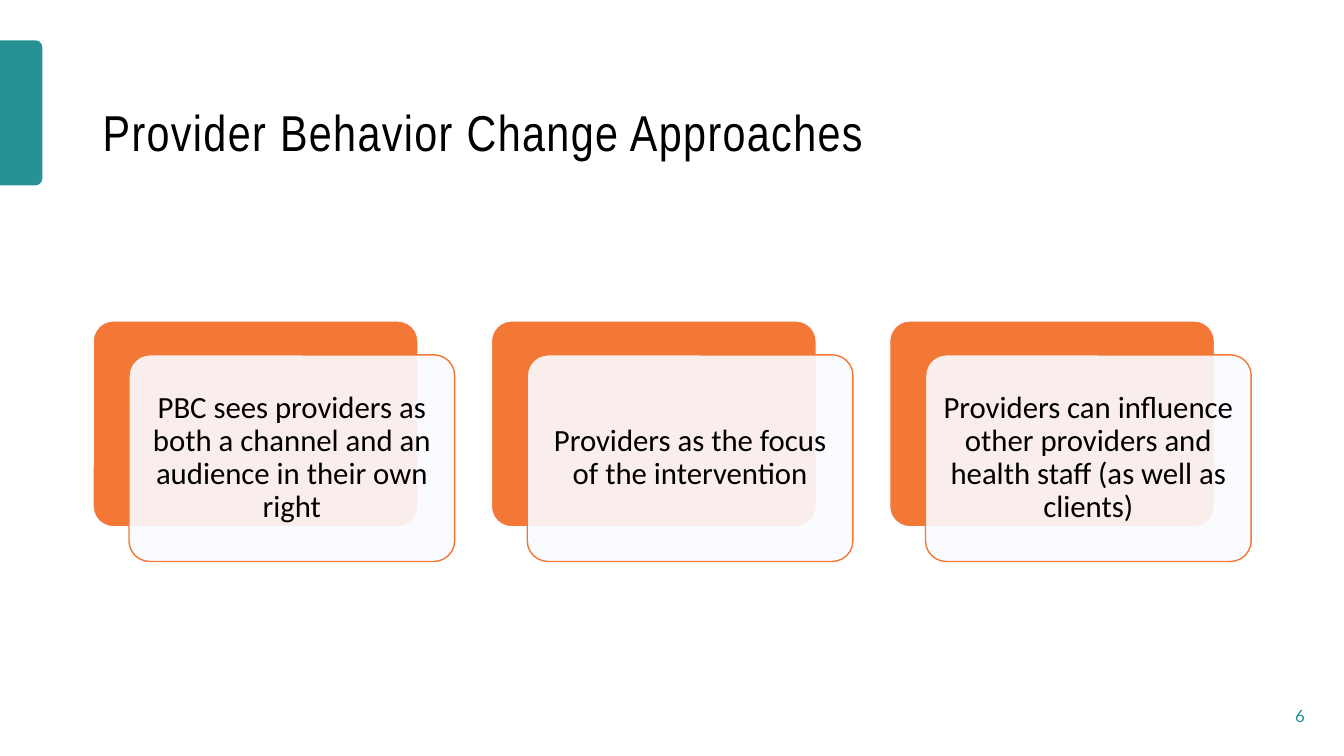
from lxml import etree
from pptx import Presentation
from pptx.dml.color import RGBColor
from pptx.enum.shapes import MSO_SHAPE
from pptx.enum.text import MSO_ANCHOR, PP_ALIGN
from pptx.oxml.ns import qn
from pptx.util import Inches, Pt

TITLE = "Provider Behavior Change Approaches"
PAGE_NUMBER = "6"
APPROACHES = [
    "PBC sees providers as both a channel and an audience in their own right",
    "Providers as the focus of the intervention",
    "Providers can influence other providers and health staff (as well as clients)",
]

COLOURS = {"teal": "289195", "orange": "F37836", "pale": "FAFBFF", "black": "000000"}

TITLE_FORMAT = {
    "font": {"name": "Arial Narrow", "size": Pt(36)},
    "paragraph": {"line_spacing": 0.9},
}
NUMBER_FORMAT = {
    "font": {"name": "Lato", "size": Pt(12)},
    "paragraph": {"alignment": PP_ALIGN.RIGHT, "space_after": Pt(6)},
}
CARD_FORMAT = {
    "font": {"name": "Calibri", "size": Pt(22)},
    "paragraph": {"alignment": PP_ALIGN.CENTER, "line_spacing": 0.9},
    "frame": {f"margin_{side}": Inches(0.09) for side in ("left", "top", "right", "bottom")},
}

CARD_LEFT, CARD_TOP = 0.92, 3.18
CARD_WIDTH, CARD_HEIGHT = 3.23, 2.05
CARD_PITCH = 3.95
FRONT_SHIFT_X, FRONT_SHIFT_Y = 0.36, 0.34
CARD_ROUNDING = 0.1


def colour(name):
    return RGBColor.from_string(COLOURS[name])


def set_all(target, values):
    for attribute, value in values.items():
        setattr(target, attribute, value)


def write(shape, text, ink, formats):
    """Put one formatted, vertically centred paragraph in a shape; return its run."""
    frame = shape.text_frame
    set_all(frame, {"word_wrap": True, "vertical_anchor": MSO_ANCHOR.MIDDLE})
    set_all(frame, formats.get("frame", {}))
    paragraph = frame.paragraphs[0]
    set_all(paragraph, formats["paragraph"])
    run = paragraph.add_run()
    run.text = text
    set_all(run.font, formats["font"])
    run.font.color.rgb = colour(ink)
    return run


def add_block(slide, kind, box, fill, line=None, line_width=1):
    block = slide.shapes.add_shape(kind, *map(Inches, box))
    block.shadow.inherit = False
    block.fill.solid()
    block.fill.fore_color.rgb = colour(fill)
    if line:
        block.line.color.rgb = colour(line)
        block.line.width = Pt(line_width)
    else:
        block.line.fill.background()
    return block


def add_card(slide, left, top, fill, line, line_width):
    box = (left, top, CARD_WIDTH, CARD_HEIGHT)
    card = add_block(slide, MSO_SHAPE.ROUNDED_RECTANGLE, box, fill, line, line_width)
    card.adjustments[0] = CARD_ROUNDING
    return card


def set_opacity(shape, percent):
    fill_colour = shape.fill._xPr.find(qn("a:solidFill"))[0]
    etree.SubElement(fill_colour, qn("a:alpha")).set("val", str(percent * 1000))


def main():
    deck = Presentation()
    deck.slide_width, deck.slide_height = Inches(13.33), Inches(7.5)
    slide = deck.slides.add_slide(deck.slide_layouts[6])

    side_tab = add_block(
        slide, MSO_SHAPE.ROUND_2_SAME_RECTANGLE, (-0.51, 0.91, 1.44, 0.42), "teal"
    )
    side_tab.rotation = 90

    title = slide.shapes.add_textbox(*map(Inches, (0.92, 0.83, 11.5, 1.02)))
    title_run = write(title, TITLE, "black", TITLE_FORMAT)
    title_run.font._element.set("spc", "100")

    number = slide.shapes.add_textbox(*map(Inches, (12.27, 6.9, 0.77, 0.4)))
    write(number, PAGE_NUMBER, "teal", NUMBER_FORMAT)

    for index, approach in enumerate(APPROACHES):
        left = CARD_LEFT + index * CARD_PITCH
        add_card(slide, left, CARD_TOP, "orange", "pale", 1.5)
        front = add_card(
            slide, left + FRONT_SHIFT_X, CARD_TOP + FRONT_SHIFT_Y, "pale", "orange", 1
        )
        set_opacity(front, 90)
        write(front, approach, "black", CARD_FORMAT)

    deck.save("out.pptx")


if __name__ == "__main__":
    main()
